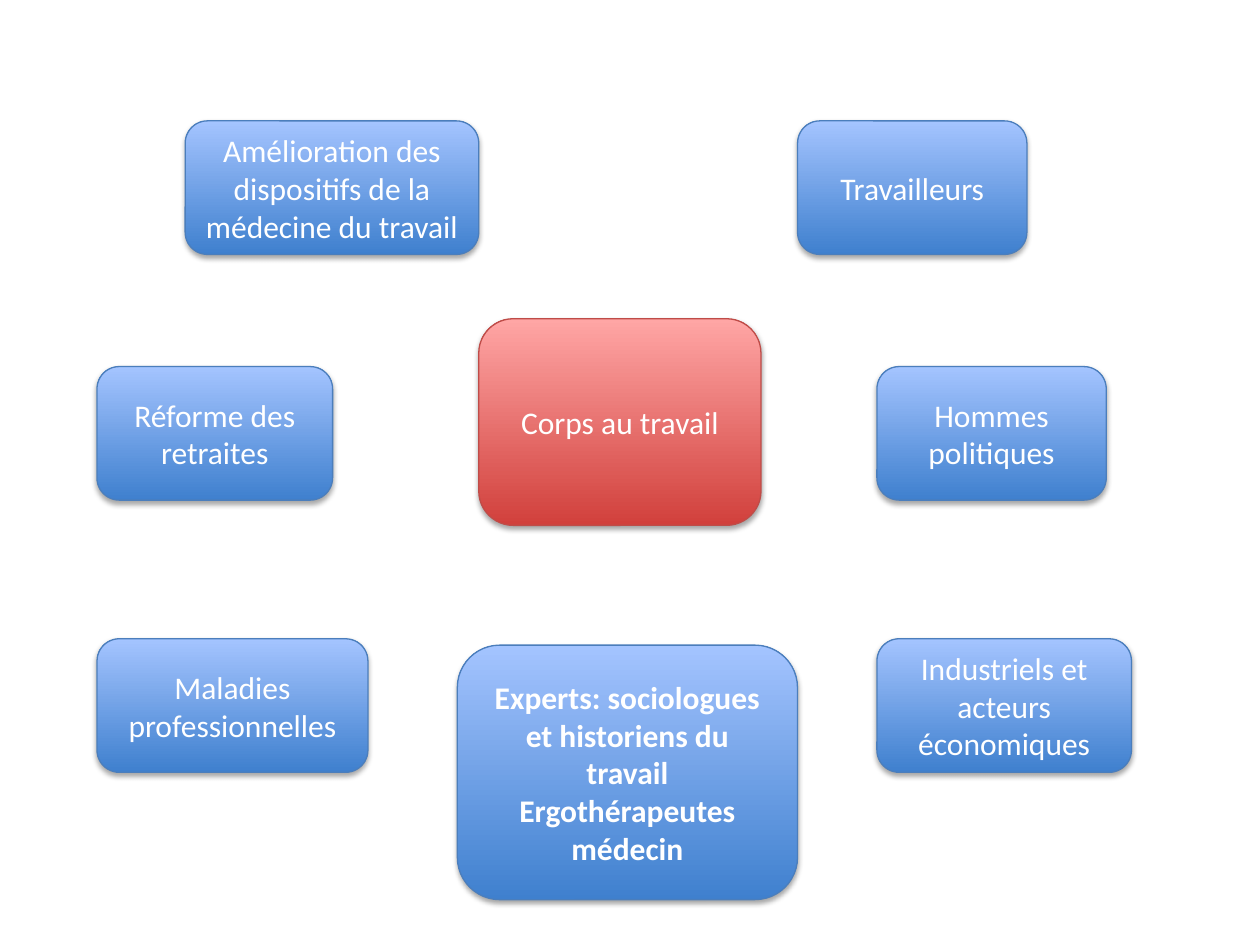
from lxml import etree
from pptx import Presentation
from pptx.dml.color import RGBColor
from pptx.enum.shapes import MSO_SHAPE
from pptx.enum.text import MSO_ANCHOR, PP_ALIGN
from pptx.oxml.ns import qn
from pptx.util import Inches, Pt

ROUND = MSO_SHAPE.ROUNDED_RECTANGLE
ALT = MSO_SHAPE.FLOWCHART_ALTERNATE_PROCESS
MIDDLE = MSO_ANCHOR.MIDDLE
CENTER = PP_ALIGN.CENTER

THEME = {
    "font": "Calibri", "size": 18, "text": "FFFFFF", "shadow": "000000",
    # each tone: bottom colour, top colour, outline
    "blue": ("3F80CE", "A4C4FF", "4B7EBC"),
    "red": ("D1403C", "FFA6A5", "BF4C48"),
}

WIDE, HIGH = 10, 7.5
LEFT, RIGHT = 0.77, 6.96
ROWS = (0.96, 2.91, 5.07)
BOX_H = 1.06

CORE = (["Corps au travail"], (3.8, 2.53, 2.24, 1.64))
# text, left edge, row, width
TOPICS = [
    ("Amélioration des dispositifs de la médecine du travail", 1.47, 0, 2.33),
    ("Maladies professionnelles", LEFT, 2, 2.15),
    ("Réforme des retraites", LEFT, 1, 1.87),
    ("Industriels et acteurs économiques", RIGHT, 2, 2.02),
    ("Hommes politiques", RIGHT, 1, 1.82),
    ("Travailleurs", 6.33, 0, 1.82),
]
EXPERTS = (
    ["Experts: sociologues et historiens du travail", "Ergothérapeutes", "médecin"],
    (3.63, 5.12, 2.7, 2.02),
)


def rgb(code):
    return RGBColor.from_string(code)


def write(frame, lines, bold=False):
    frame.word_wrap = True
    frame.vertical_anchor = MIDDLE
    for i, line in enumerate(lines):
        para = frame.paragraphs[0] if i == 0 else frame.add_paragraph()
        para.alignment = CENTER
        run = para.add_run()
        run.text = line
        run.font.name = THEME["font"]
        run.font.size = Pt(THEME["size"])
        run.font.bold = bold
        run.font.color.rgb = rgb(THEME["text"])


def shade(shape):
    """Give the shape a soft shadow straight below it."""
    shape.shadow.inherit = False
    effects = shape._element.spPr.find(qn("a:effectLst"))
    outer = etree.SubElement(
        effects, qn("a:outerShdw"), blurRad=str(Pt(3.1)), dist=str(Pt(1.8)),
        dir="5400000", rotWithShape="0")
    color = etree.SubElement(outer, qn("a:srgbClr"), val=THEME["shadow"])
    etree.SubElement(color, qn("a:alpha"), val="35000")


def add_box(slide, lines, place, kind=ROUND, tone="blue", bold=False):
    low, top, edge = THEME[tone]
    shape = slide.shapes.add_shape(kind, *map(Inches, place))
    shape.fill.gradient()
    shape.fill.gradient_angle = 90
    for stop, color in zip(shape.fill.gradient_stops, (low, top)):
        stop.color.rgb = rgb(color)
    shape.line.color.rgb = rgb(edge)
    shape.line.width = Pt(0.75)
    shade(shape)
    write(shape.text_frame, lines, bold=bold)


def main():
    deck = Presentation()
    deck.slide_width, deck.slide_height = Inches(WIDE), Inches(HIGH)
    slide = deck.slides.add_slide(deck.slide_layouts[6])
    add_box(slide, *CORE, kind=ALT, tone="red")
    for text, left, row, width in TOPICS:
        add_box(slide, [text], (left, ROWS[row], width, BOX_H))
    add_box(slide, *EXPERTS, bold=True)
    deck.save("out.pptx")


if __name__ == "__main__":
    main()
